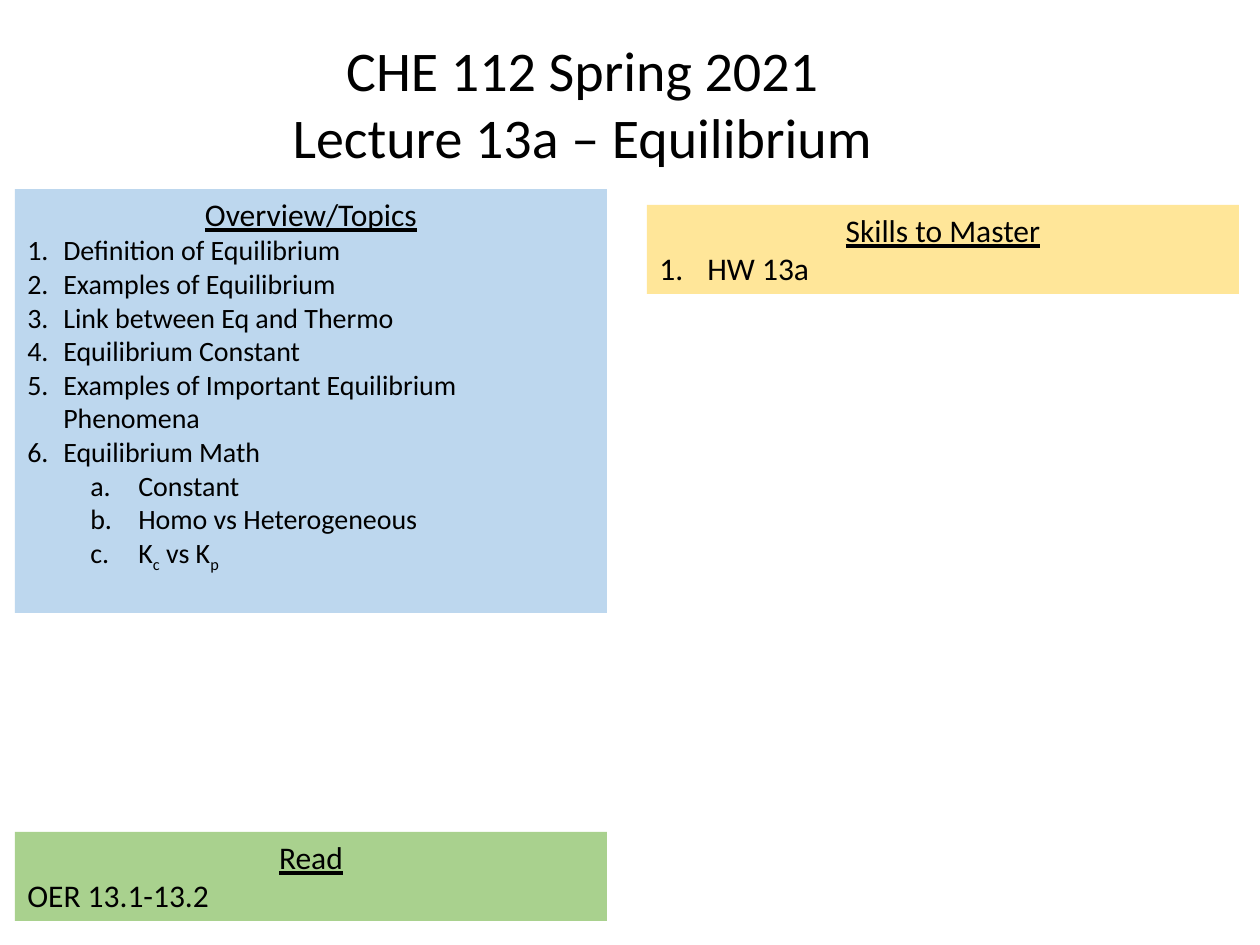
from dataclasses import dataclass

from lxml import etree
from pptx import Presentation
from pptx import util as u
from pptx.dml.color import RGBColor
from pptx.enum import shapes, text
from pptx.oxml.ns import qn

EMU_PER_PX = 914400 / 126


@dataclass(frozen=True)
class Theme:
    font: str = "Calibri"
    ink: str = "000000"
    blue: str = "BDD7EE"
    yellow: str = "FFE699"
    green: str = "A9D18E"
    title: int = 32
    heading: int = 18
    topic: int = 16


@dataclass(frozen=True)
class Run:
    text: str
    underline: bool = False
    subscript: bool = False


@dataclass(frozen=True)
class Numbering:
    scheme: str
    margin: int
    hanging: int
    level: int = 0


@dataclass(frozen=True)
class Para:
    runs: tuple[Run, ...]
    size: int
    centred: bool = False
    numbering: Numbering | None = None


@dataclass(frozen=True)
class Box:
    left: int
    top: int
    width: int
    height: int


@dataclass(frozen=True)
class Panel:
    box: Box
    fill: str
    heading: str
    body: tuple[Para, ...]


THEME = Theme()
TOPIC = Numbering("arabicPeriod", 36, 36)
SUBTOPIC = Numbering("alphaLcPeriod", 111, 48, level=1)
SKILL = Numbering("arabicPeriod", 48, 48)

TOPICS = (
    "Definition of Equilibrium",
    "Examples of Equilibrium",
    "Link between Eq and Thermo",
    "Equilibrium Constant",
    "Examples of Important Equilibrium Phenomena",
    "Equilibrium Math",
)
SUBTOPICS = (
    (Run("Constant"),),
    (Run("Homo vs Heterogeneous"),),
    (Run("K"), Run("c", subscript=True), Run(" vs K"), Run("p", subscript=True)),
)
PANELS = (
    Panel(
        Box(15, 189, 592, 424), THEME.blue, "Overview/Topics",
        tuple(Para((Run(t),), THEME.topic, numbering=TOPIC) for t in TOPICS)
        + tuple(Para(runs, THEME.topic, numbering=SUBTOPIC) for runs in SUBTOPICS),
    ),
    Panel(
        Box(647, 205, 592, 89), THEME.yellow, "Skills to Master",
        (Para((Run("HW 13a"),), THEME.heading, numbering=SKILL),),
    ),
    Panel(
        Box(15, 832, 592, 89), THEME.green, "Read",
        (Para((Run("OER 13.1-13.2"),), THEME.heading),),
    ),
)
TITLE_BOX = Box(277, 29, 611, 149)
TITLE = ("CHE 112 Spring 2021", "Lecture 13a – Equilibrium")


def px(n: int) -> u.Emu:
    return u.Emu(round(n * EMU_PER_PX))


def place(box: Box) -> tuple[u.Emu, ...]:
    return px(box.left), px(box.top), px(box.width), px(box.height)


def number(p, numbering: Numbering) -> None:
    """Give a paragraph automatic numbering with a hanging indent."""
    p.level = numbering.level
    pPr = p._p.get_or_add_pPr()
    pPr.set("marL", str(px(numbering.margin)))
    pPr.set("indent", str(-px(numbering.hanging)))
    etree.SubElement(pPr, qn("a:buFont"), typeface="+mj-lt")
    etree.SubElement(pPr, qn("a:buAutoNum"), type=numbering.scheme)


def write(tf, paras: tuple[Para, ...]) -> None:
    for i, para in enumerate(paras):
        p = tf.add_paragraph() if i else tf.paragraphs[0]
        p.alignment = text.PP_ALIGN.CENTER if para.centred else text.PP_ALIGN.LEFT
        if para.numbering:
            number(p, para.numbering)
        for run in para.runs:
            r = p.add_run()
            r.text = run.text
            r.font.name = THEME.font
            r.font.size = u.Pt(para.size)
            r.font.color.rgb = RGBColor.from_string(THEME.ink)
            r.font.underline = run.underline
            if run.subscript:
                r._r.get_or_add_rPr().set("baseline", "-25000")


def add_panel(slide, panel: Panel) -> None:
    sp = slide.shapes.add_shape(shapes.MSO_SHAPE.RECTANGLE, *place(panel.box))
    sp.shadow.inherit = False
    sp.fill.solid()
    sp.fill.fore_color.rgb = RGBColor.from_string(panel.fill)
    sp.line.fill.background()
    tf = sp.text_frame
    tf.word_wrap = True
    tf.vertical_anchor = text.MSO_ANCHOR.TOP
    heading = Para((Run(panel.heading, underline=True),), THEME.heading, centred=True)
    write(tf, (heading, *panel.body))


def add_title(slide) -> None:
    tf = slide.shapes.add_textbox(*place(TITLE_BOX)).text_frame
    tf.word_wrap = False
    write(tf, tuple(Para((Run(t),), THEME.title, centred=True) for t in TITLE))


def main() -> None:
    prs = Presentation()
    prs.slide_width, prs.slide_height = px(1260), px(945)
    slide = prs.slides.add_slide(prs.slide_layouts[6])
    for panel in PANELS:
        add_panel(slide, panel)
    add_title(slide)
    prs.save("out.pptx")


if __name__ == "__main__":
    main()
